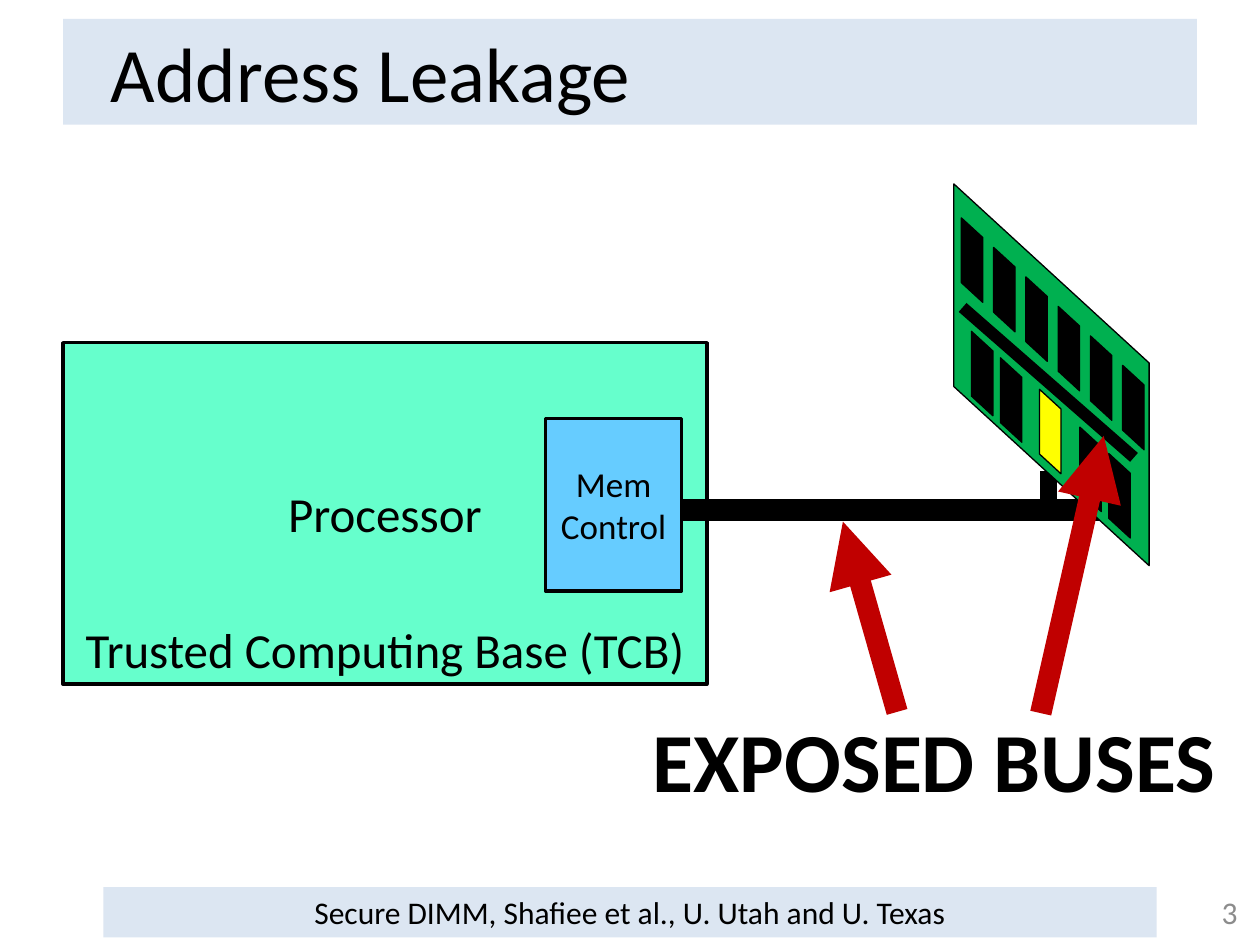
from typing import NamedTuple

from lxml.etree import SubElement
from pptx import Presentation
from pptx.dml.color import RGBColor
from pptx.enum.shapes import MSO_CONNECTOR, MSO_SHAPE
from pptx.enum.text import MSO_ANCHOR, PP_ALIGN
from pptx.oxml.ns import qn
from pptx.util import Inches, Pt

BLACK, BAND, RED = "000000", "DCE6F2", "C00000"
GREEN, YELLOW = "00B050", "FFFF00"


class Box(NamedTuple):
    left: float
    top: float
    width: float
    height: float


class Line(NamedTuple):
    start: tuple[float, float]
    end: tuple[float, float]
    width: float
    color: str = BLACK
    arrow: bool = False


def rgb(color: str) -> RGBColor:
    return RGBColor.from_string(color)


def inches(box: Box) -> list[int]:
    return [Inches(v) for v in box]


def add_block(s, kind, box: Box, fill: str, line_width: float = 0):
    """Add a filled shape, outlined in black when line_width is above zero."""
    sp = s.shapes.add_shape(kind, *inches(box))
    sp.shadow.inherit = False
    sp.fill.solid()
    sp.fill.fore_color.rgb = rgb(fill)
    if line_width:
        sp.line.color.rgb = rgb(BLACK)
        sp.line.width = Pt(line_width)
    else:
        sp.line.fill.background()
    return sp


def add_slanted(s, box: Box, fill: str) -> None:
    """Add a parallelogram turned upright, as the module and its chips are."""
    sp = add_block(s, MSO_SHAPE.PARALLELOGRAM, box, fill, 0.75)
    sp.adjustments[0] = 0.917
    sp.rotation = 90


def add_line(s, line: Line) -> None:
    points = [Inches(v) for v in (*line.start, *line.end)]
    c = s.shapes.add_connector(MSO_CONNECTOR.STRAIGHT, *points)
    c.line.color.rgb = rgb(line.color)
    c.line.width = Pt(line.width)
    if line.arrow:
        SubElement(c.line._get_or_add_ln(), qn("a:tailEnd"), type="triangle")
    SubElement(c._element.spPr, qn("a:effectLst"))


def write(sp, lines: list[str], size: float, color: str = BLACK,
          align=PP_ALIGN.CENTER, anchor=MSO_ANCHOR.MIDDLE,
          bold: bool = False, wrap: bool = True, gap: float = 0) -> None:
    """Write one paragraph per line, with gap points between them."""
    tf = sp.text_frame
    tf.word_wrap = wrap
    tf.vertical_anchor = anchor
    for i, text in enumerate(lines):
        p = tf.paragraphs[0] if i == 0 else tf.add_paragraph()
        p.text = text
        p.alignment = align
        p.space_before = Pt(gap if i else 0)
        p.font.name = "Calibri"
        p.font.size = Pt(size)
        p.font.bold = bold
        p.font.color.rgb = rgb(color)


def add_label(s, box: Box, lines: list[str], size: float, **style) -> None:
    write(s.shapes.add_textbox(*inches(box)), lines, size, **style)


def add_title(s, text: str) -> None:
    sp = s.shapes.title
    sp.left, sp.top, sp.width, sp.height = inches(Box(0.5, 0.15, 9, 0.84))
    sp.fill.solid()
    sp.fill.fore_color.rgb = rgb(BAND)
    write(sp, [text], 44, align=PP_ALIGN.LEFT)
    sp.text_frame.margin_left = Inches(0.38)


def add_memory_module(s) -> None:
    add_slanted(s, Box(6.83, 2.2, 3.03, 1.55), GREEN)
    top_row = [(7.38 + 0.256 * i, 1.98 + 0.234 * i) for i in range(6)]
    bottom_row = [(x + 0.23 * i, y + 0.21 * i)
                  for x, y in ((7.46, 2.88), (8.32, 3.64)) for i in range(2)]
    for x, y in top_row + bottom_row:
        add_slanted(s, Box(x, y, 0.67, 0.17), BLACK)
    add_slanted(s, Box(8, 3.34, 0.67, 0.17), YELLOW)
    add_line(s, Line((7.64, 2.44), (9, 3.63), 6.75))


def main() -> None:
    prs = Presentation()
    prs.slide_width, prs.slide_height = Inches(10), Inches(7.5)
    s = prs.slides.add_slide(prs.slide_layouts[5])

    add_title(s, "Address Leakage")
    footer = add_block(s, MSO_SHAPE.RECTANGLE, Box(0.82, 7.04, 8.36, 0.4), BAND)
    write(footer, ["Secure DIMM, Shafiee et al., U. Utah and U. Texas"], 18)
    add_label(s, Box(9.5, 7.04, 0.42, 0.4), ["3"], 18, color="8C8C8C",
              align=PP_ALIGN.RIGHT)

    add_block(s, MSO_SHAPE.RECTANGLE, Box(0.5, 2.72, 5.11, 2.71), "66FFCC", 2)
    control = add_block(s, MSO_SHAPE.RECTANGLE, Box(4.33, 3.32, 1.08, 1.37),
                        "66CCFF", 2)
    write(control, ["Mem", "Control"], 20)
    add_label(s, Box(0.55, 3.79, 5.01, 1.65),
              ["Processor", "Trusted Computing Base (TCB)"], 28,
              anchor=MSO_ANCHOR.TOP, wrap=False, gap=44)

    add_line(s, Line((5.41, 4.05), (8.78, 4.05), 12.75))
    add_line(s, Line((8.32, 3.74), (8.32, 4), 10))
    add_memory_module(s)

    add_label(s, Box(5.06, 5.57, 4.71, 0.91), ["EXPOSED BUSES"], 48,
              anchor=MSO_ANCHOR.TOP, bold=True, wrap=False)
    add_line(s, Line((7.12, 5.65), (6.69, 4.14), 12.25, RED, True))
    add_line(s, Line((8.26, 5.66), (8.76, 3.46), 12.25, RED, True))

    prs.save("out.pptx")


if __name__ == "__main__":
    main()
